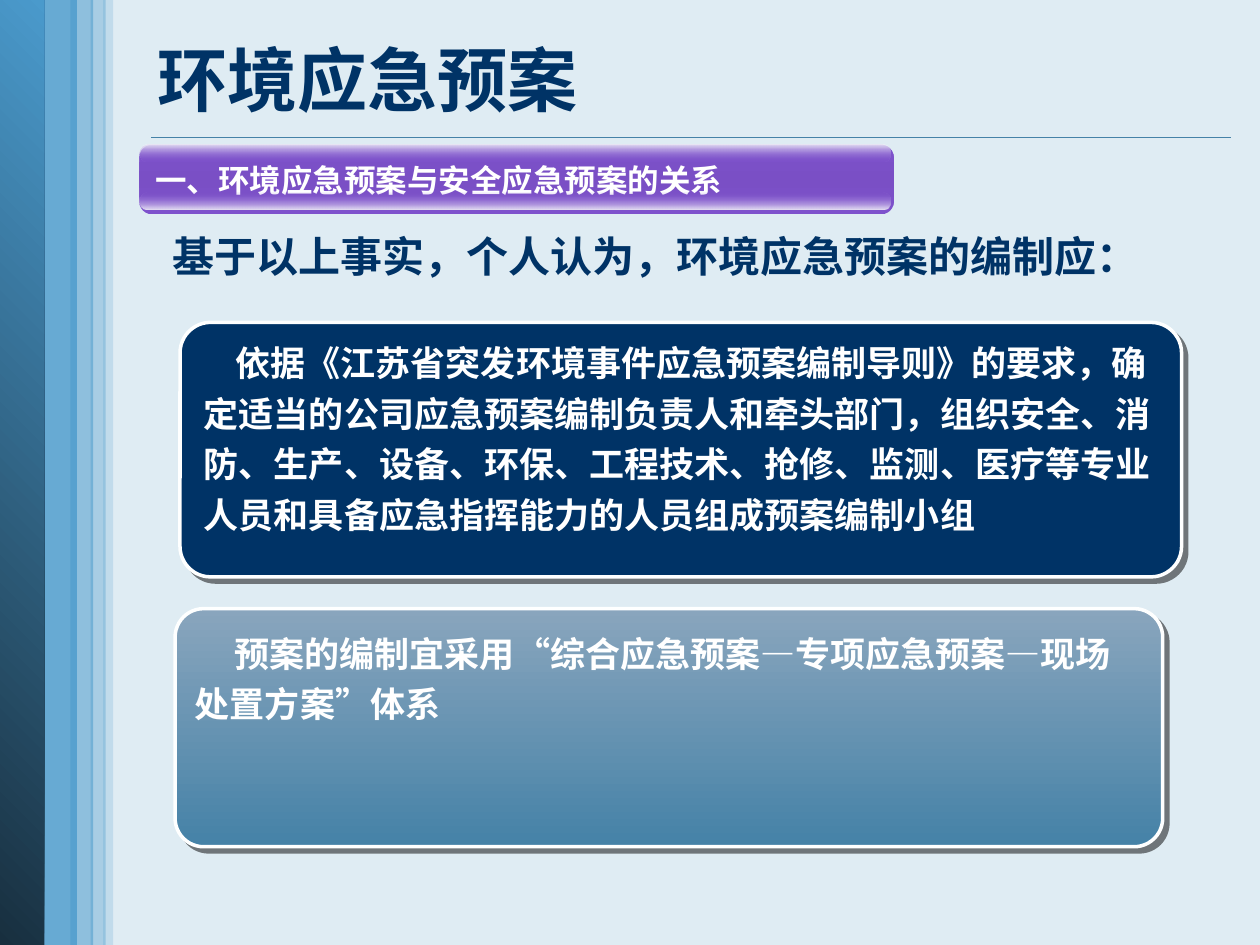
from lxml.etree import SubElement as Sub
from pptx import Presentation
from pptx.dml.color import RGBColor as Rgb
from pptx.enum.shapes import MSO_CONNECTOR as Link, MSO_SHAPE as Form
from pptx.enum.text import MSO_ANCHOR as Anchor, MSO_AUTO_SIZE as Auto, PP_ALIGN as Align
from pptx.oxml import parse_xml
from pptx.oxml.ns import nsdecls, qn
from pptx.util import Cm, Pt

HUES = {
    "paper": "DFECF3", "navy": "003366", "steel": "4582A7", "mist": "89A5BD",
    "sky": "4A9ACC", "deep": "182F3F", "white": "FFFFFF", "edge": "FEFFFF",
    "violet": "7E52CC", "plum": "7A4FC5", "low": "ECE9F6", "high": "EAE7F5",
    "black": "000000",
}
CJK = "Noto Sans CJK SC"


def hue(name):
    return Rgb.from_string(HUES[name])


def tint(name, alpha=100):
    return (f'<a:srgbClr val="{HUES[name]}">'
            f'<a:alpha val="{alpha * 1000}"/></a:srgbClr>')


def put(item, values):
    for key, value in values.items():
        setattr(item, key, value)


class Deck:
    def __init__(self):
        self.prs = Presentation()
        put(self.prs, {"slide_width": Cm(25.4), "slide_height": Cm(19.05)})
        self.slide = self.prs.slides.add_slide(self.prs.slide_layouts[1])
        back = self.slide.background.fill
        back.solid()
        back.fore_color.rgb = hue("paper")

    def place(self, item, box):
        keys = ("left", "top", "width", "height")
        put(item, dict(zip(keys, map(Cm, box))))

    def label(self, item, text, size, color="white", font="Arial", frame=None, para=None):
        body = item.text_frame
        put(body, {"word_wrap": True, "auto_size": Auto.NONE, **(frame or {})})
        line = body.paragraphs[0]
        put(line, {"alignment": Align.LEFT, **(para or {})})
        run = line.add_run()
        run.text = text
        put(run.font, {"name": font, "size": Pt(size), "bold": True})
        run.font.color.rgb = hue(color)
        Sub(run.font._element, qn("a:ea"), typeface=CJK)
        return line

    def title(self, box, text):
        item = self.slide.shapes.title
        self.place(item, box)
        self.label(item, text, 40, "navy", frame={"vertical_anchor": Anchor.MIDDLE})

    def lead(self, box, text):
        item = self.slide.placeholders[1]
        self.place(item, box)
        line = self.label(item, text, 24, "navy", CJK, para={"space_before": Pt(4.8)})
        props = line._p.get_or_add_pPr()
        for key, value in {"marL": Cm(0.97), "indent": Cm(-0.97)}.items():
            props.set(key, str(value))
        Sub(props, qn("a:buNone"))

    def note(self, box, text, indent, frame=None):
        item = self.slide.shapes.add_textbox(*map(Cm, box))
        line = self.label(item, text, 20, frame=frame, para={"line_spacing": 1.2})
        line._p.get_or_add_pPr().set("indent", str(Cm(indent)))

    def rule(self, start, end):
        item = self.slide.shapes.add_connector(Link.STRAIGHT, *map(Cm, start + end))
        item.line.width = Pt(1)
        item.line.color.rgb = hue("steel")
        Sub(item._element.spPr, qn("a:effectLst"))

    def shape(self, box, stops, angle=90, bend=None, group=None):
        home = (group or self.slide).shapes
        form = Form.RECTANGLE if bend is None else Form.ROUNDED_RECTANGLE
        item = home.add_shape(form, *map(Cm, box))
        if bend is not None:
            item.adjustments[0] = bend
        item.shadow.inherit = False
        item.line.fill.background()
        if len(stops) == 1:
            xml = f'<a:solidFill {nsdecls("a")}>{tint(*stops[0])}</a:solidFill>'
        else:
            step = 100000 // (len(stops) - 1)
            marks = "".join(f'<a:gs pos="{i * step}">{tint(*stop)}</a:gs>'
                            for i, stop in enumerate(stops))
            xml = (f'<a:gradFill {nsdecls("a")} rotWithShape="1"><a:gsLst>{marks}</a:gsLst>'
                   f'<a:lin ang="{angle * 60000}" scaled="0"/></a:gradFill>')
        item._element.spPr.find(qn("a:prstGeom")).addnext(parse_xml(xml))
        return item

    def card(self, box, stops):
        item = self.shape(box, stops, bend=0.12)
        item.line.color.rgb = hue("edge")
        item.line.width = Pt(2)
        item._element.spPr.find(qn("a:effectLst")).append(parse_xml(
            f'<a:outerShdw {nsdecls("a")} dist="{Pt(4.2)}" dir="2700000" '
            f'algn="ctr" rotWithShape="0">{tint("black", 50)}</a:outerShdw>'))

    def banner(self, left, top, text):
        group = self.slide.shapes.add_group_shape()
        base = self.shape((left, top, 15.21, 1.4),
                          [("violet",), ("plum",), ("violet",)], bend=0.18, group=group)
        self.label(base, text, 18, font=CJK,
                   frame={"word_wrap": False, "vertical_anchor": Anchor.MIDDLE})
        glows = ((0.97, [("violet", 0), ("low",)]), (0, [("high",), ("violet", 0)]))
        for drop, stops in glows:
            self.shape((left, top + drop, 15.14, 0.33), stops, bend=0.5, group=group)


def main():
    deck = Deck()
    deck.rule((3.05, 2.77), (24.82, 2.77))
    bands = (
        (0.76, 0.79, [("sky", 80)]),
        (0, 0.89, [("deep",), ("sky",)]),
        (2.08, 0.2, [("sky", 20)]),
        (1.42, 0.46, [("sky", 54)]),
        (1.83, 0.3, [("sky", 37)]),
    )
    for left, width, stops in bands:
        deck.shape((left, 0, width, 19.05), stops, angle=315)
    deck.title((2.92, 0.18, 22.1, 2.82), "环境应急预案")
    deck.banner(2.81, 2.92, "一、环境应急预案与安全应急预案的关系")
    deck.lead((3.23, 4.52, 20.62, 1.47), "基于以上事实，个人认为，环境应急预案的编制应：")
    deck.card((3.63, 6.5, 20.19, 5.13), [("navy",)])
    deck.card((3.53, 12.27, 19.91, 4.8), [("mist",), ("steel",)])
    deck.note((3.86, 6.6, 19.66, 4.32),
              "依据《江苏省突发环境事件应急预案编制导则》的要求，确定适当的公司应急预案编制负责人和牵头部门，"
              "组织安全、消防、生产、设备、环保、工程技术、抢修、监测、医疗等专业人员和具备应急指挥能力的人员"
              "组成预案编制小组", 0.64, {"margin_right": Cm(0)})
    deck.note((3.68, 12.45, 19.66, 2.29),
              "预案的编制宜采用“综合应急预案—专项应急预案—现场处置方案”体系", 0.8)
    deck.prs.save("out.pptx")


if __name__ == "__main__":
    main()
